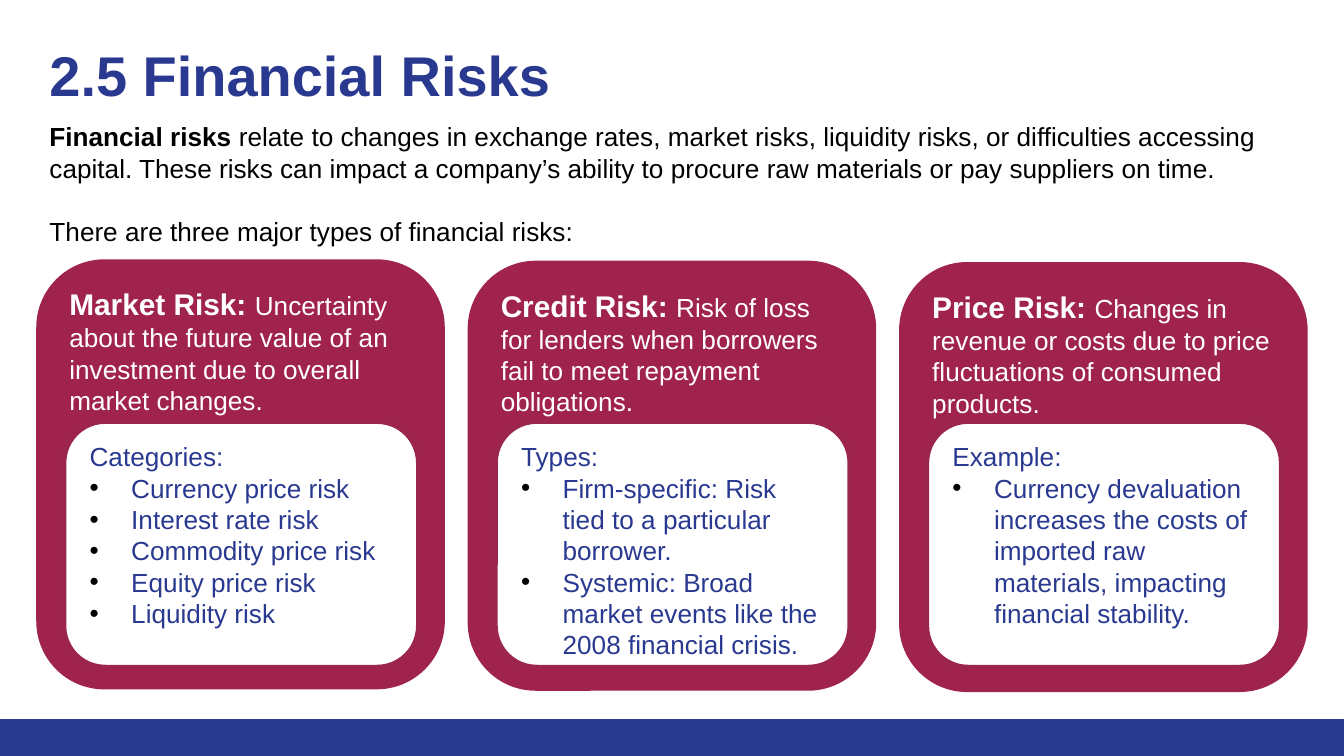
"""Build the Financial Risks slide with three risk cards."""
from lxml import etree
from pptx import Presentation
from pptx import util as u
from pptx.dml.color import RGBColor
from pptx.enum import shapes, text
from pptx.oxml import ns

BLUE = RGBColor(0x2A, 0x39, 0x90)
CRIMSON = RGBColor(0xA0, 0x23, 0x4E)
BORDER = RGBColor(0x9C, 0x25, 0x4D)
WHITE = RGBColor(0xFF, 0xFF, 0xFF)
BLACK = RGBColor(0, 0, 0)

CARD_LEFT, CARD_TOP, CARD_STEP = 0.27, 1.93, 3.21
CARDS = [
    ("Market Risk: ",
     "Uncertainty about the future value of an investment due to overall market changes.",
     "Categories:",
     ["Currency price risk", "Interest rate risk", "Commodity price risk",
      "Equity price risk", "Liquidity risk"]),
    ("Credit Risk: ",
     "Risk of loss for lenders when borrowers fail to meet repayment obligations.",
     "Types:",
     ["Firm-specific: Risk tied to a particular borrower.",
      "Systemic: Broad market events like the 2008 financial crisis."]),
    ("Price Risk: ",
     "Changes in revenue or costs due to price fluctuations of consumed products.",
     "Example:",
     ["Currency devaluation increases the costs of imported raw materials, "
      "impacting financial stability."]),
]


def add_run(paragraph, content, size=14, color=BLACK, bold=False):
    """Append formatted text to a paragraph."""
    run = paragraph.add_run()
    run.text = content
    run.font.name = "Arial"
    run.font.size = u.Pt(size)
    run.font.bold = bold
    run.font.color.rgb = color


def add_bullet(paragraph):
    """Give a paragraph a black bullet and a hanging indent."""
    properties = paragraph._p.get_or_add_pPr()
    properties.set("marL", str(u.Inches(0.31)))
    properties.set("indent", str(-u.Inches(0.31)))
    bullet_color = etree.SubElement(properties, ns.qn("a:buClr"))
    etree.SubElement(bullet_color, ns.qn("a:srgbClr"), val=str(BLACK))
    etree.SubElement(properties, ns.qn("a:buFont"), typeface="Arial")
    etree.SubElement(properties, ns.qn("a:buChar"), char="•")


def prepare_frame(shape):
    """Return the shape's text frame, wrapped and set to the top left."""
    frame = shape.text_frame
    frame.word_wrap = True
    frame.vertical_anchor = text.MSO_ANCHOR.TOP
    frame.paragraphs[0].alignment = text.PP_ALIGN.LEFT
    return frame


def add_text_box(slide, left, top, width, height):
    """Add a text box and return its frame."""
    box = slide.shapes.add_textbox(*map(u.Inches, (left, top, width, height)))
    return prepare_frame(box)


def add_panel(slide, kind, left, top, width, height, fill, line=None):
    """Add a filled shape, outlined if a line colour is given, and return its frame."""
    shape = slide.shapes.add_shape(kind, *map(u.Inches, (left, top, width, height)))
    shape.shadow.inherit = False
    shape.fill.solid()
    shape.fill.fore_color.rgb = fill
    if line is None:
        shape.line.fill.background()
    else:
        shape.line.color.rgb = line
        shape.line.width = u.Pt(2)
    return prepare_frame(shape)


def add_heading(slide):
    """Add the title and the introduction."""
    title = add_text_box(slide, 0.27, 0.2, 9.2, 0.89)
    title.margin_top = title.margin_bottom = u.Inches(0.1)
    add_run(title.paragraphs[0], "2.5 Financial Risks", size=30, color=BLUE, bold=True)

    intro = add_text_box(slide, 0.27, 0.85, 9.46, 1.04)
    definition = intro.paragraphs[0]
    add_run(definition, "Financial risks ", bold=True)
    add_run(definition, "relate to changes in exchange rates, market risks, liquidity risks, "
            "or difficulties accessing capital. These risks can impact a company’s ability "
            "to procure raw materials or pay suppliers on time.")
    lead_in = intro.add_paragraph()
    lead_in.space_before = u.Pt(17)
    add_run(lead_in, "There are three major types of financial risks:")


def add_card(slide, index, name, definition, heading, items):
    """Add one risk card with its inner panel of bullets."""
    rounded = shapes.MSO_SHAPE.ROUNDED_RECTANGLE
    left = CARD_LEFT + index * CARD_STEP
    top = CARD_TOP + index * 0.01
    card = add_panel(slide, rounded, left, top, 3.04, 3.2, CRIMSON)
    add_run(card.paragraphs[0], name, size=16, color=WHITE, bold=True)
    add_run(card.paragraphs[0], definition, color=WHITE)

    panel = add_panel(slide, rounded, left + 0.21, 3.14, 2.63, 1.82, WHITE, line=BORDER)
    add_run(panel.paragraphs[0], heading, color=BLUE)
    for item in items:
        paragraph = panel.add_paragraph()
        paragraph.alignment = text.PP_ALIGN.LEFT
        add_bullet(paragraph)
        add_run(paragraph, item, color=BLUE)


def main():
    """Build and save the presentation."""
    presentation = Presentation()
    presentation.slide_width = u.Inches(10)
    presentation.slide_height = u.Inches(10) * 9 // 16
    slide = presentation.slides.add_slide(presentation.slide_layouts[6])
    add_panel(slide, shapes.MSO_SHAPE.RECTANGLE, 0, 5.35, 10, 0.28, BLUE)
    add_heading(slide)
    for index, card in enumerate(CARDS):
        add_card(slide, index, *card)
    presentation.save("out.pptx")


if __name__ == "__main__":
    main()
